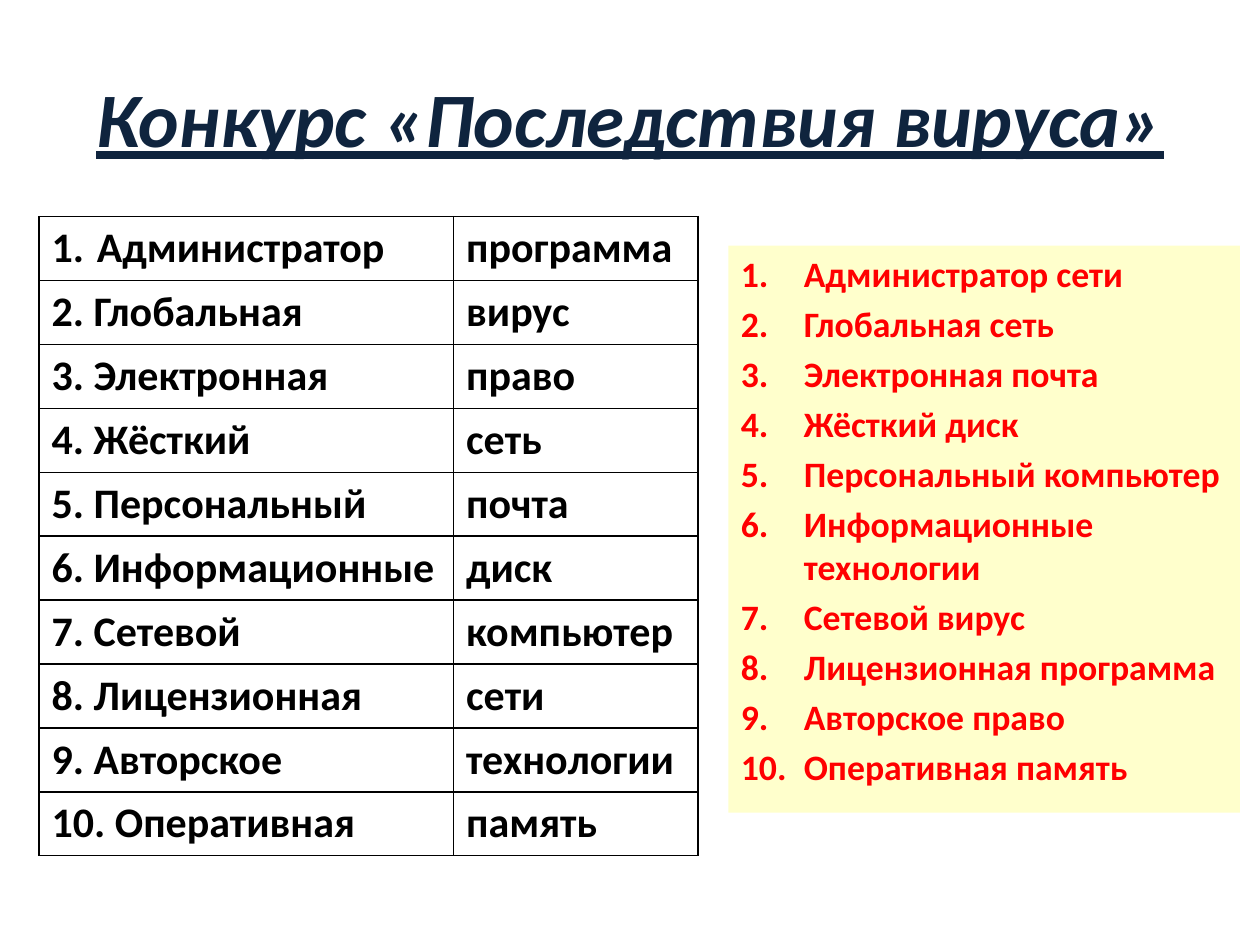
from dataclasses import dataclass

from lxml import etree
from pptx import Presentation
from pptx.dml.color import RGBColor
from pptx.enum.text import MSO_ANCHOR, MSO_AUTO_SIZE, PP_ALIGN
from pptx.oxml.ns import qn
from pptx.util import Inches, Pt

CENTER, LEFT = PP_ALIGN.CENTER, PP_ALIGN.LEFT
MIDDLE, TOP = MSO_ANCHOR.MIDDLE, MSO_ANCHOR.TOP
NO_AUTOFIT = MSO_AUTO_SIZE.NONE


@dataclass(frozen=True)
class Theme:
    font: str = "Calibri"
    title_color: str = "0F243E"
    table_color: str = "000000"
    answer_color: str = "FF0000"
    answer_fill: str = "FFFFCC"
    title_size: float = 44
    table_size: float = 24
    answer_size: float = 20.4
    border_width: float = 1


THEME = Theme()


def format_text(para, size, color):
    for span in para.runs:
        span.font.name = THEME.font
        span.font.size = Pt(size)
        span.font.bold = True
        span.font.color.rgb = RGBColor.from_string(color)


def number_paragraph(para, indent):
    properties = para._p.get_or_add_pPr()
    properties.set("marL", str(indent))
    properties.set("indent", str(-indent))
    etree.SubElement(properties, qn("a:buFont"), typeface=THEME.font)
    etree.SubElement(properties, qn("a:buAutoNum"), type="arabicPeriod")


deck = Presentation()
deck.slide_width, deck.slide_height = Inches(10), Inches(7.5)
page = deck.slides.add_slide(deck.slide_layouts[1])

# Title
title = page.shapes.title
title.left, title.top = Inches(0.5), Inches(0.3)
title.width, title.height = Inches(9), Inches(1.25)
title.text_frame.text = "Конкурс «Последствия вируса»"
title.text_frame.auto_size = NO_AUTOFIT
title.text_frame.vertical_anchor = MIDDLE
heading = title.text_frame.paragraphs[0]
heading.alignment = CENTER
format_text(heading, THEME.title_size, THEME.title_color)
heading.runs[0].font.italic = True
heading.runs[0].font.underline = True

# Table of word halves to match
word_pairs = [
    ("Администратор", "программа"),
    ("2. Глобальная", "вирус"),
    ("3. Электронная", "право"),
    ("4. Жёсткий", "сеть"),
    ("5. Персональный", "почта"),
    ("6. Информационные", "диск"),
    ("7. Сетевой", "компьютер"),
    ("8. Лицензионная", "сети"),
    ("9. Авторское", "технологии"),
    ("10. Оперативная", "память"),
]
row_height = Inches(0.5)
table = page.shapes.add_table(
    len(word_pairs), 2, Inches(0.31), Inches(1.72),
    Inches(5.23), row_height * len(word_pairs),
).table
table.first_row = False
table.horz_banding = False
table.columns[0].width = Inches(3.29)
table.columns[1].width = Inches(1.94)

for row, pair in enumerate(word_pairs):
    table.rows[row].height = row_height
    for column, word in enumerate(pair):
        cell = table.cell(row, column)
        cell.text_frame.text = word
        format_text(cell.text_frame.paragraphs[0], THEME.table_size, THEME.table_color)
        cell.fill.background()
        # Borders come before the fill in the cell properties
        cell_properties = cell._tc.get_or_add_tcPr()
        for position, side in enumerate(("a:lnL", "a:lnR", "a:lnT", "a:lnB")):
            line = etree.Element(qn(side), w=str(Pt(THEME.border_width)))
            fill = etree.SubElement(line, qn("a:solidFill"))
            etree.SubElement(fill, qn("a:srgbClr"), val=THEME.table_color)
            cell_properties.insert(position, line)

number_paragraph(table.cell(0, 0).text_frame.paragraphs[0], Inches(0.36))

# Numbered answers
answers = [
    "Администратор сети",
    "Глобальная сеть",
    "Электронная почта",
    "Жёсткий диск",
    "Персональный компьютер",
    "Информационные технологии",
    "Сетевой вирус",
    "Лицензионная программа",
    "Авторское право",
    "Оперативная память",
]
answer_box = page.placeholders[1]
answer_box.left, answer_box.top = Inches(5.78), Inches(1.95)
answer_box.width, answer_box.height = Inches(4.06), Inches(4.5)
answer_box.fill.solid()
answer_box.fill.fore_color.rgb = RGBColor.from_string(THEME.answer_fill)
answer_box.text_frame.text = "\n".join(answers)
answer_box.text_frame.auto_size = NO_AUTOFIT
answer_box.text_frame.word_wrap = True
answer_box.text_frame.vertical_anchor = TOP
for para in answer_box.text_frame.paragraphs:
    para.alignment = LEFT
    para.space_before = Pt(0.2 * THEME.answer_size)
    format_text(para, THEME.answer_size, THEME.answer_color)
    number_paragraph(para, Inches(0.5))

deck.save("out.pptx")
